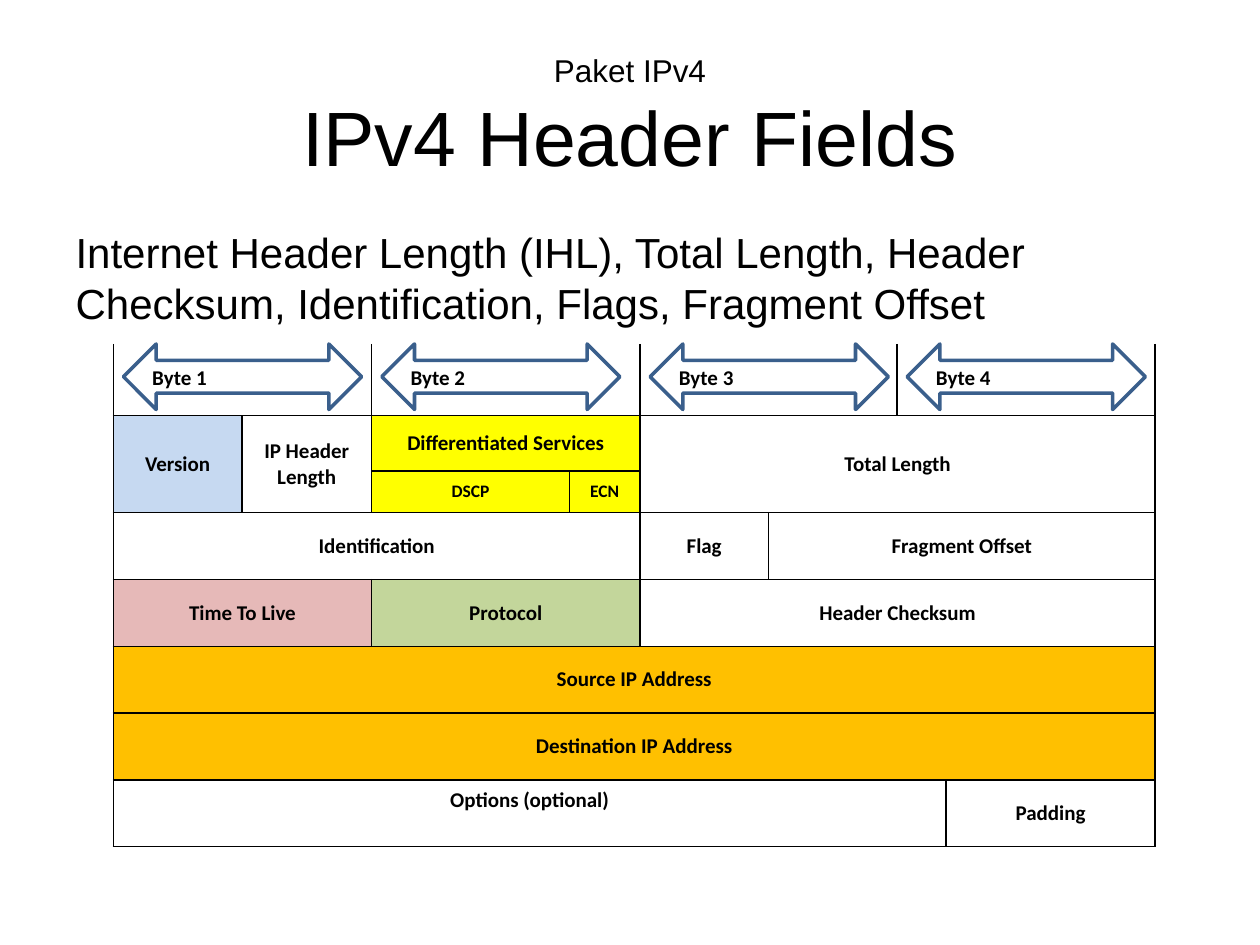
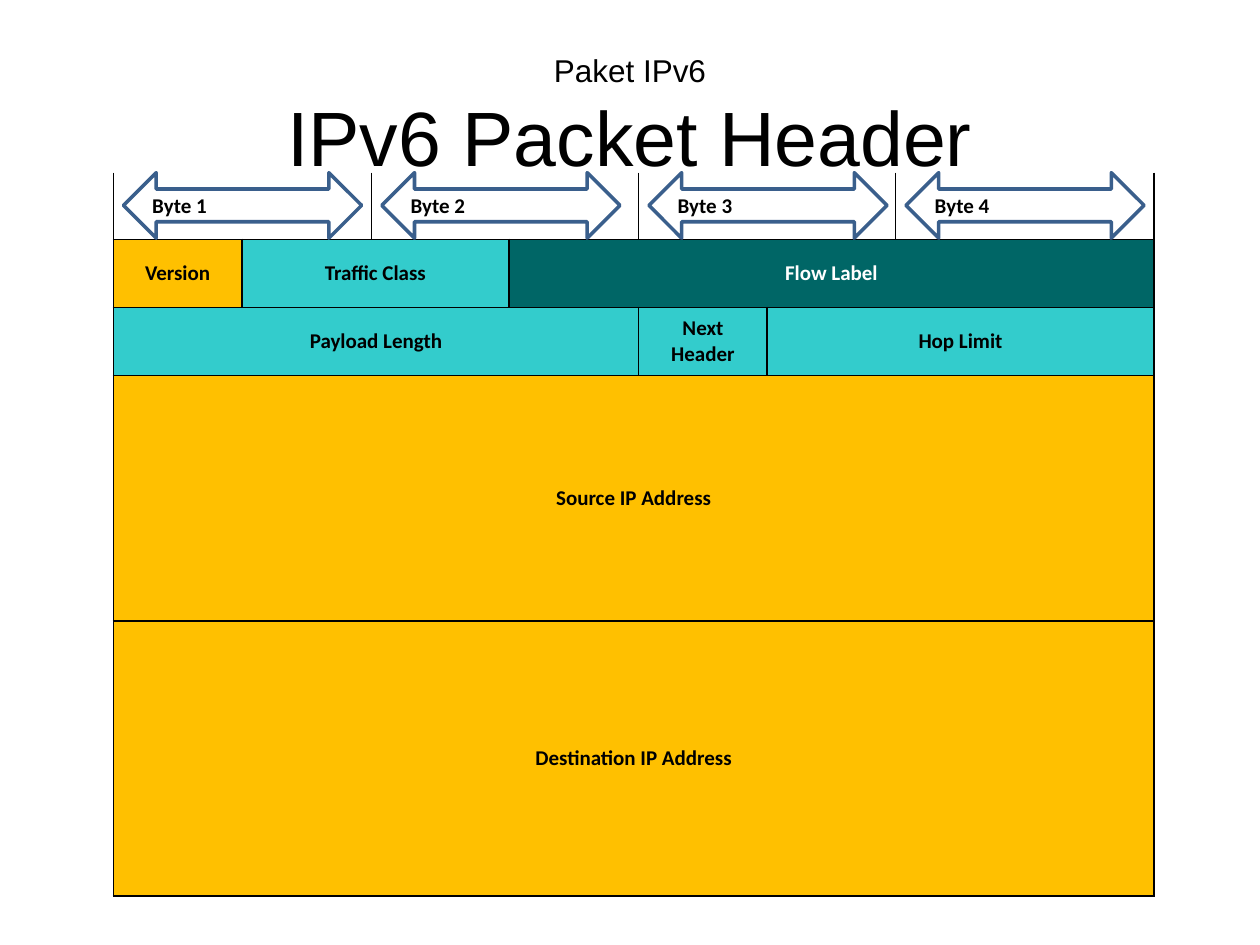
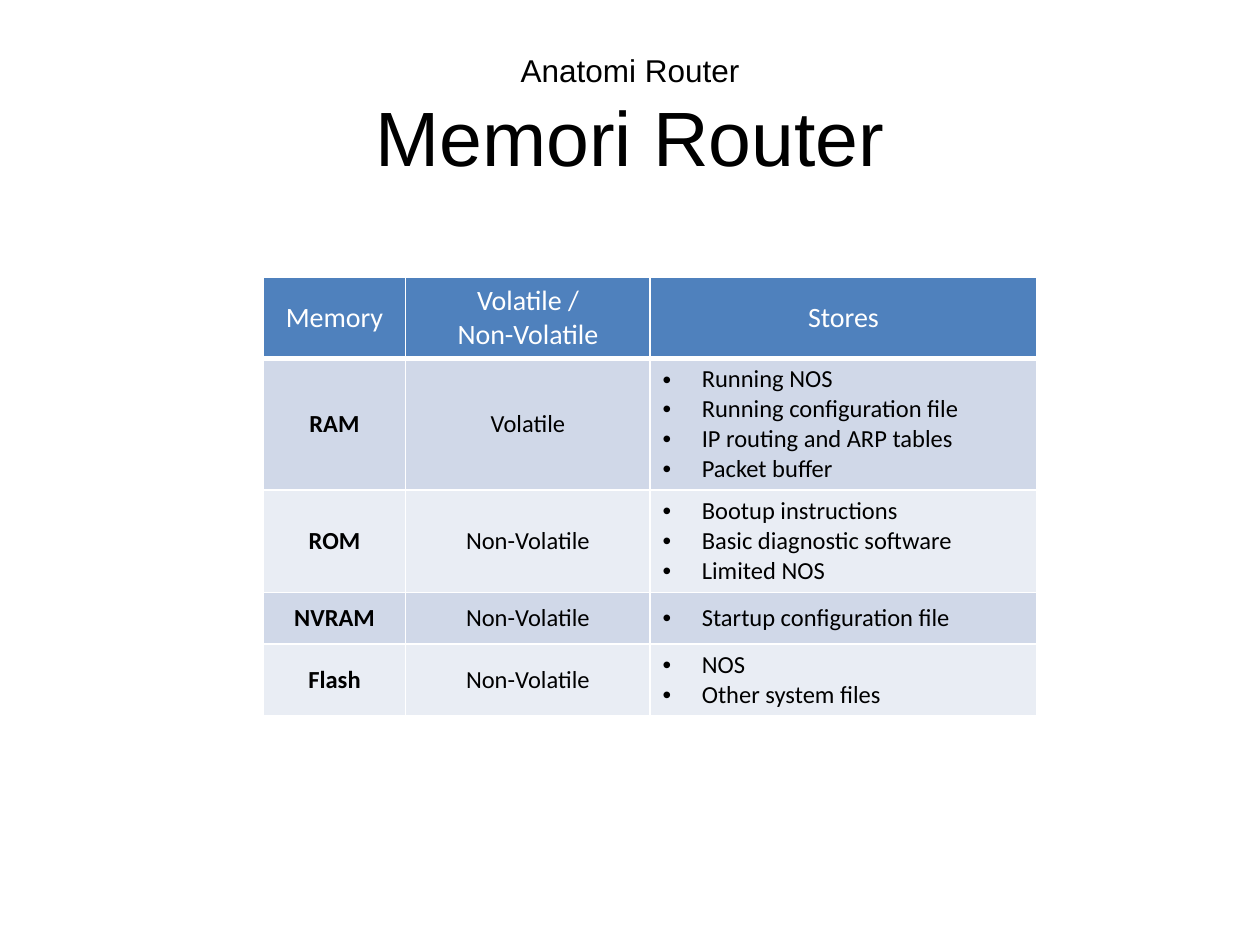
from lxml.etree import SubElement
from pptx import Presentation
from pptx.dml.color import RGBColor
from pptx.enum.shapes import MSO_SHAPE as Shape
from pptx.enum.text import MSO_ANCHOR as Anchor, MSO_AUTO_SIZE as AutoSize, PP_ALIGN as Align
from pptx.oxml.ns import qn
from pptx.util import Inches, Pt

COLORS = {
    "black": "000000", "white": "FFFFFF", "arrow": "3A5F8C",
    "pale blue": "C6D9F1", "yellow": "FFFF00", "rose": "E6B9B8", "green": "C3D69B",
    "amber": "FFC000", "turquoise": "33CCCC", "teal": "006666",
    "heading": "4F81BD", "odd row": "D0D8E8", "even row": "E9EDF4",
}
NO_STYLE = "{2D5ABB26-0587-4C30-8999-92F81FD0307C}"


def add_grid(slide, left, top, columns, rows):
    frame = slide.shapes.add_table(len(rows), len(columns), Inches(left), Inches(top),
                                   Inches(sum(columns)), Inches(sum(rows)))
    grid = frame.table
    grid.first_row = grid.horz_banding = False
    grid._tbl.tblPr[0].text = NO_STYLE
    for column, width in zip(grid.columns, columns):
        column.width = Inches(width)
    for row, height in zip(grid.rows, rows):
        row.height = Inches(height)
    return grid


def style_cell(cell, text, fill=None, size=12, bold=True, color="black",
               border="black", widths=(1, 1, 1, 1), bullets=False):
    # Borders come first in the cell properties: left, right, top, bottom
    properties = cell._tc.get_or_add_tcPr()
    for side, width in zip("LRTB", widths):
        line = SubElement(properties, qn(f"a:ln{side}"), w=str(Pt(width)))
        if width:
            solid = SubElement(line, qn("a:solidFill"))
            SubElement(solid, qn("a:srgbClr"), val=COLORS[border])
        else:
            SubElement(line, qn("a:noFill"))
    if fill:
        cell.fill.solid()
        cell.fill.fore_color.rgb = RGBColor.from_string(COLORS[fill])
    else:
        cell.fill.background()
    cell.vertical_anchor = Anchor.MIDDLE
    cell.text_frame.text = text
    for paragraph in cell.text_frame.paragraphs:
        paragraph.alignment = Align.LEFT if bullets else Align.CENTER
        if bullets:
            indent = paragraph._p.get_or_add_pPr()
            indent.set("marL", str(Inches(0.31)))
            indent.set("indent", str(Inches(-0.31)))
            SubElement(indent, qn("a:buFont"), typeface="Arial")
            SubElement(indent, qn("a:buChar"), char="•")
        for run in paragraph.runs:
            run.font.name, run.font.size, run.font.bold = "Calibri", Pt(size), bold
            run.font.color.rgb = RGBColor.from_string(COLORS[color])


prs = Presentation()
prs.slide_width, prs.slide_height = Inches(10), Inches(7.5)
TITLE_AND_BODY, TITLE_ONLY = prs.slide_layouts[1], prs.slide_layouts[5]

# Slides with their two-line titles
headings = [
    (TITLE_AND_BODY, "Paket IPv4", "IPv4 Header Fields"),
    (TITLE_ONLY, "Paket IPv6", "IPv6 Packet Header"),
    (TITLE_ONLY, "Anatomi Router", "Memori Router"),
]
for layout, topic, heading in headings:
    title = prs.slides.add_slide(layout).shapes.title
    title.left, title.top = Inches(0.5), Inches(0.3)
    title.width, title.height = Inches(9), Inches(1.25)
    title.text_frame.text = f"{topic}\v{heading}"
    title.text_frame.auto_size = AutoSize.NONE
    title.text_frame.vertical_anchor = Anchor.MIDDLE
    title.text_frame.paragraphs[0].alignment = Align.CENTER
    for run, size in zip(title.text_frame.paragraphs[0].runs, (18, 44)):
        run.font.name, run.font.size = "Arial", Pt(size)
        run.font.color.rgb = RGBColor.from_string(COLORS["black"])
ipv4_slide, ipv6_slide, memory_slide = prs.slides

# IPv4: list of the fields
summary = ipv4_slide.placeholders[1]
summary.left, summary.top = Inches(0.5), Inches(1.75)
summary.width, summary.height = Inches(9), Inches(4.95)
summary.text_frame.text = ("Internet Header Length (IHL), Total Length, Header Checksum, "
                           "Identification, Flags, Fragment Offset")
summary.text_frame.auto_size = AutoSize.NONE
sentence = summary.text_frame.paragraphs[0]
sentence.space_before = Pt(0)
flush = sentence._p.get_or_add_pPr()
flush.set("marL", "0")
flush.set("indent", "0")
SubElement(flush, qn("a:buNone"))
sentence.runs[0].font.name, sentence.runs[0].font.size = "Arial", Pt(24)
sentence.runs[0].font.color.rgb = RGBColor.from_string(COLORS["black"])

# Header fields: row, column, rows spanned, columns spanned, text, fill
ipv4_fields = [
    (1, 0, 2, 1, "Version", "pale blue"),
    (1, 1, 2, 1, "IP Header Length", None),
    (1, 2, 1, 2, "Differentiated Services", "yellow"),
    (1, 4, 2, 4, "Total Length", None),
    (2, 2, 1, 1, "DSCP", "yellow"),
    (2, 3, 1, 1, "ECN", "yellow"),
    (3, 0, 1, 4, "Identification", None),
    (3, 4, 1, 1, "Flag", None),
    (3, 5, 1, 3, "Fragment Offset", None),
    (4, 0, 1, 2, "Time To Live", "rose"),
    (4, 2, 1, 2, "Protocol", "green"),
    (4, 4, 1, 4, "Header Checksum", None),
    (5, 0, 1, 8, "Source IP Address", "amber"),
    (6, 0, 1, 8, "Destination IP Address", "amber"),
    (7, 0, 1, 7, "Options (optional)", None),
    (7, 7, 1, 1, "Padding", None),
]
ipv6_fields = [
    (1, 0, 1, 1, "Version", "amber"),
    (1, 1, 1, 2, "Traffic Class", "turquoise"),
    (1, 3, 1, 4, "Flow Label", "teal"),
    (2, 0, 1, 4, "Payload Length", "turquoise"),
    (2, 4, 1, 1, "Next Header", "turquoise"),
    (2, 5, 1, 2, "Hop Limit", "turquoise"),
    (3, 0, 1, 7, "Source IP Address", "amber"),
    (4, 0, 1, 7, "Destination IP Address", "amber"),
]
packets = [
    (ipv4_slide, 2.73, [1.02, 1.03, 1.57, 0.56, 1.02, 1.02, 0.39, 1.66],
     [0.57, 0.44, 0.33] + [0.53] * 5, ipv4_fields),
    (ipv6_slide, 1.37, [1.02, 1.03, 1.09, 1.03, 1.02, 1.02, 2.05],
     [0.53, 0.54, 0.54, 1.95, 2.18], ipv6_fields),
]
packet_left = 0.9
for slide, top, columns, rows, fields in packets:
    header = add_grid(slide, packet_left, top, columns, rows)

    # Byte scale: each byte takes two columns, open at the top
    for byte in range(4):
        first = 2 * byte
        last = min(first + 1, len(columns) - 1)
        if last > first:
            header.cell(0, first).merge(header.cell(0, last))
        style_cell(header.cell(0, first), "", widths=(1, 1, 0, 1))

        arrow = slide.shapes.add_shape(
            Shape.LEFT_RIGHT_ARROW, Inches(packet_left + sum(columns[:first]) + 0.08),
            Inches(top), Inches(1.89), Inches(0.52))
        arrow.shadow.inherit = False
        arrow.fill.background()
        arrow.line.color.rgb = RGBColor.from_string(COLORS["arrow"])
        arrow.line.width = Pt(2)
        arrow.text_frame.text = f"Byte {byte + 1}"
        arrow.text_frame.vertical_anchor = Anchor.MIDDLE
        label = arrow.text_frame.paragraphs[0]
        label.alignment = Align.LEFT
        font = label.runs[0].font
        font.name, font.size, font.bold = "Calibri", Pt(12), True
        font.color.rgb = RGBColor.from_string(COLORS["black"])

    # Fields
    for row, column, row_span, column_span, text, fill in fields:
        field = header.cell(row, column)
        if row_span * column_span > 1:
            field.merge(header.cell(row + row_span - 1, column + column_span - 1))
        style_cell(field, text, fill, size=10 if text in ("DSCP", "ECN") else 12,
                   color="white" if fill == "teal" else "black")
        if text.startswith("Options"):
            field.margin_bottom = Inches(0.25)

# Router memory
memories = [
    ("RAM", "Volatile", "Running NOS\nRunning configuration file\n"
                        "IP routing and ARP tables\nPacket buffer"),
    ("ROM", "Non-Volatile", "Bootup instructions\nBasic diagnostic software\nLimited NOS"),
    ("NVRAM", "Non-Volatile", "Startup configuration file"),
    ("Flash", "Non-Volatile", "NOS\nOther system files"),
]
memory_table = add_grid(memory_slide, 2.09, 2.2, [1.13, 1.94, 3.07],
                        [0.63, 1.03, 0.8, 0.41, 0.57])
for column, text in enumerate(("Memory", "Volatile /\nNon-Volatile", "Stores")):
    style_cell(memory_table.cell(0, column), text, "heading", 16, False, "white",
               border="white", widths=(1, 1, 1, 3))
for row, memory in enumerate(memories, start=1):
    for column, text in enumerate(memory):
        style_cell(memory_table.cell(row, column), text, "odd row" if row % 2 else "even row",
                   14, bold=column == 0, border="white", bullets=column == 2)

prs.save("out.pptx")
